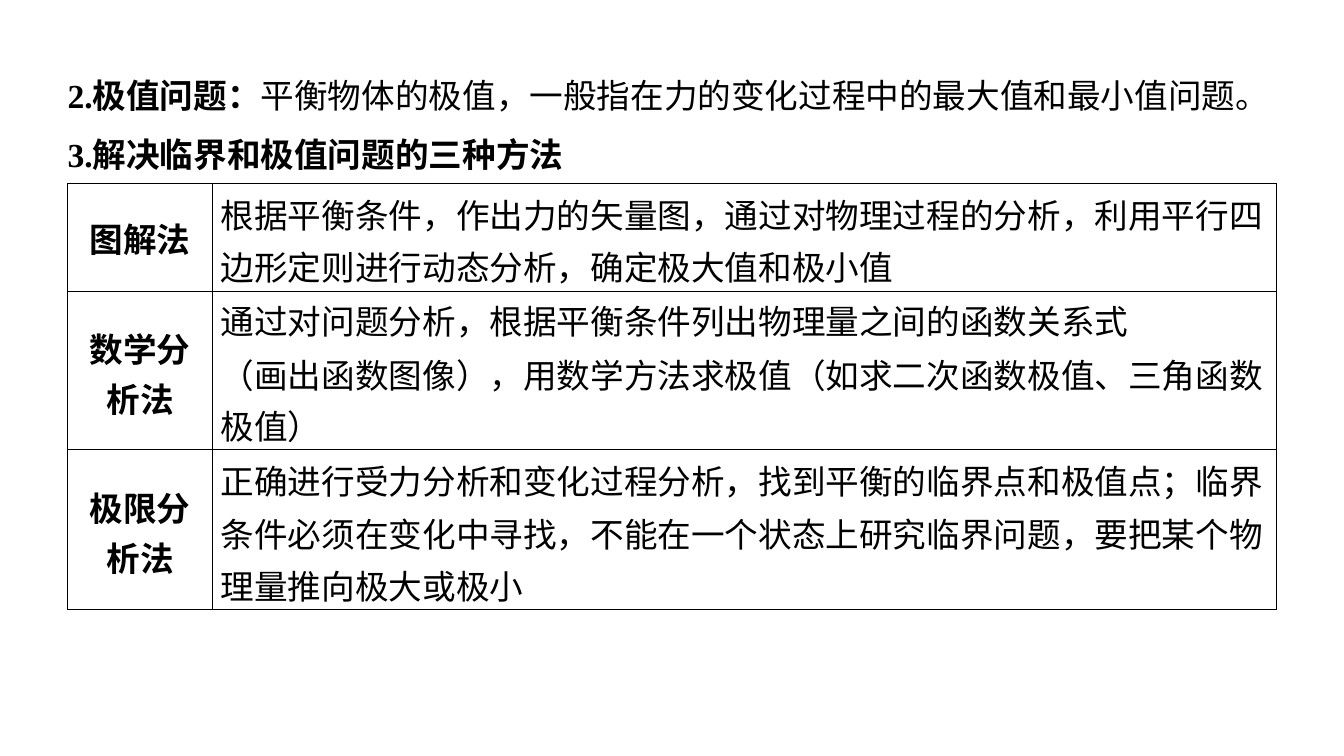
import pptx
import pptx.util
import pptx.dml.color
import pptx.enum.text
import pptx.oxml
import pptx.oxml.ns

Inches, Pt = pptx.util.Inches, pptx.util.Pt
ALIGN = pptx.enum.text.PP_ALIGN
BLACK = pptx.dml.color.RGBColor(0, 0, 0)
FONT, SIZE = "Times New Roman", 24

# Each line: line spacing in points, then (text, bold) runs
HEADINGS = [
    (44, [("2.极值问题：", True),
          ("平衡物体的极值，一般指在力的变化过程中的最大值和最小值问题。", False)]),
    (42, [("3.解决临界和极值问题的三种方法", True)]),
]
# Each method: row height in inches, name lines, description lines
METHODS = [
    (1.07, ["图解法"],
     ["根据平衡条件，作出力的矢量图，通过对物理过程的分析，利用平行四",
      "边形定则进行动态分析，确定极大值和极小值"]),
    (1.57, ["数学分", "析法"],
     ["通过对问题分析，根据平衡条件列出物理量之间的函数关系式",
      "（画出函数图像），用数学方法求极值（如求二次函数极值、三角函数",
      "极值）"]),
    (1.59, ["极限分", "析法"],
     ["正确进行受力分析和变化过程分析，找到平衡的临界点和极值点；临界",
      "条件必须在变化中寻找，不能在一个状态上研究临界问题，要把某个物",
      "理量推向极大或极小"]),
]
LEFT, TABLE_TOP = 0.67, 1.82
COLUMNS = [1.44, 10.55]


def write_lines(tf, lines, align=ALIGN.LEFT):
    for i, (spacing, runs) in enumerate(lines):
        p = tf.paragraphs[0] if i == 0 else tf.add_paragraph()
        p.alignment = align
        p.line_spacing = Pt(spacing)
        for text, bold in runs:
            r = p.add_run()
            r.text = text
            r.font.name, r.font.size, r.font.bold = FONT, Pt(SIZE), bold
            r.font.color.rgb = BLACK


def spaced(texts, last, bold):
    """Give every line 38 pt of spacing except the last one."""
    return [(last if i == len(texts) - 1 else 38, [(text, bold)])
            for i, text in enumerate(texts)]


def format_cell(cell):
    cell.margin_left = cell.margin_right = Inches(0.08)
    cell.margin_top = cell.margin_bottom = 0
    cell.vertical_anchor = pptx.enum.text.MSO_ANCHOR.MIDDLE
    tcPr = cell._tc.get_or_add_tcPr()
    for side in ("lnL", "lnR", "lnT", "lnB"):
        tcPr.append(pptx.oxml.parse_xml(
            f'<a:{side} {pptx.oxml.ns.nsdecls("a")} w="{Pt(0.75)}"><a:solidFill>'
            f'<a:srgbClr val="{BLACK}"/></a:solidFill></a:{side}>'))
    cell.fill.background()


def main():
    prs = pptx.Presentation()
    prs.slide_width, prs.slide_height = Inches(13.33), Inches(7.5)
    s = prs.slides.add_slide(prs.slide_layouts[6])

    tf = s.shapes.add_textbox(Inches(LEFT), Inches(0.53),
                              Inches(12.07), Inches(1.13)).text_frame
    tf.margin_left = tf.margin_right = tf.margin_top = tf.margin_bottom = 0
    tf.word_wrap = False
    write_lines(tf, HEADINGS)

    height = sum(method[0] for method in METHODS)
    table = s.shapes.add_table(
        len(METHODS), len(COLUMNS), Inches(LEFT), Inches(TABLE_TOP),
        Inches(sum(COLUMNS)), Inches(height)).table
    table.first_row = table.horz_banding = False
    for column, width in zip(table.columns, COLUMNS):
        column.width = Inches(width)
    for row, (row_height, name, description) in zip(table.rows, METHODS):
        row.height = Inches(row_height)
        for cell in row.cells:
            format_cell(cell)
        write_lines(row.cells[0].text_frame, spaced(name, 36, True), ALIGN.CENTER)
        write_lines(row.cells[1].text_frame, spaced(description, 37, False))

    prs.save("out.pptx")


if __name__ == "__main__":
    main()
